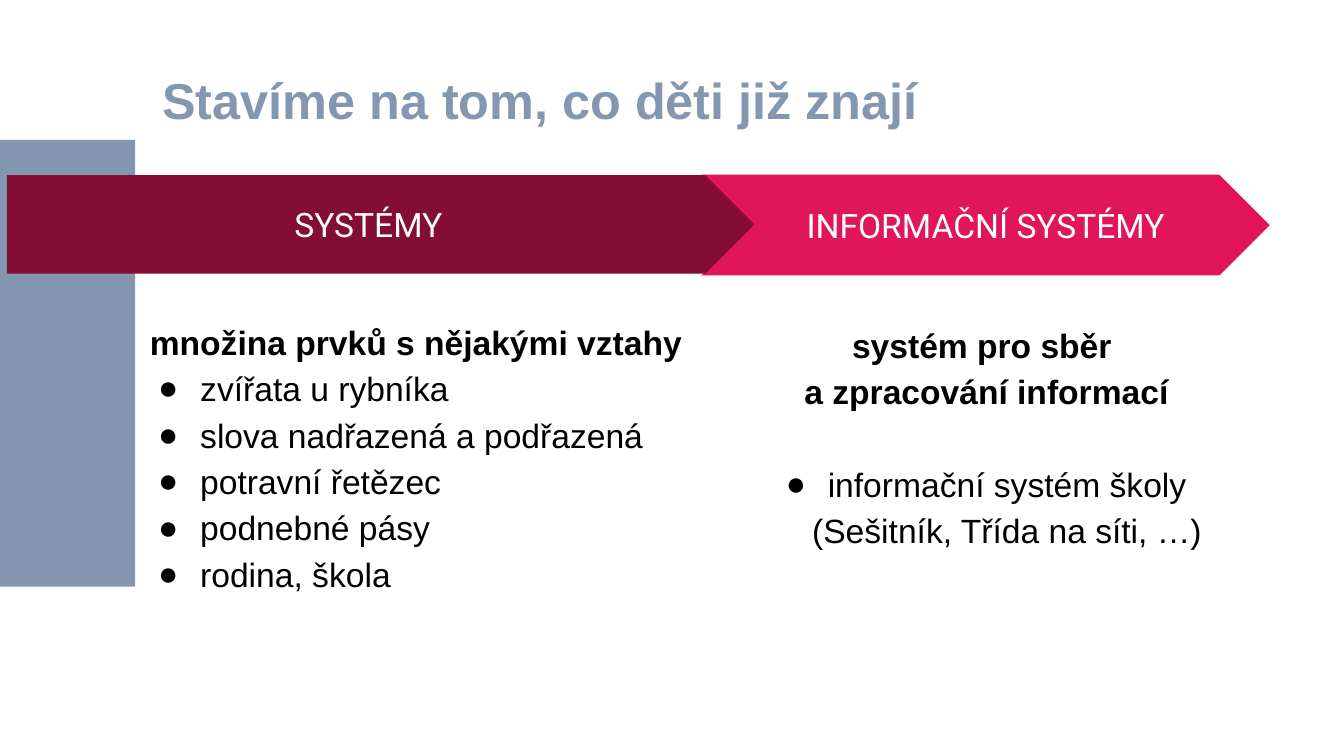
from copy import deepcopy

from lxml.etree import SubElement
from pptx import Presentation
from pptx.dml.color import RGBColor
from pptx.enum.shapes import MSO_SHAPE
from pptx.enum.text import MSO_ANCHOR, MSO_AUTO_SIZE, PP_ALIGN
from pptx.oxml.ns import qn
from pptx.util import Pt

STEEL = RGBColor(0x83, 0x97, 0xB0)
WINE = RGBColor(0x84, 0x0D, 0x35)
PINK = RGBColor(0xE1, 0x16, 0x5A)
WHITE = RGBColor(0xFF, 0xFF, 0xFF)
BLACK = RGBColor(0x00, 0x00, 0x00)

BULLET_MARGIN = Pt(36)
BULLET_INDENT = Pt(-30)
BLANK_LINE = 33
SYSTEM_EXAMPLES = [
    "zvířata u rybníka",
    "slova nadřazená a podřazená",
    "potravní řetězec",
    "podnebné pásy",
    "rodina, škola",
]


def set_bullet(paragraph, bullet):
    """Give the paragraph a black hanging bullet, or none."""
    properties = paragraph._p.get_or_add_pPr()
    properties.set("marL", str(BULLET_MARGIN if bullet else 0))
    properties.set("indent", str(BULLET_INDENT if bullet else 0))
    if bullet:
        color = SubElement(properties, qn("a:buClr"))
        SubElement(color, qn("a:srgbClr"), val=str(BLACK))
        SubElement(properties, qn("a:buChar"), char=bullet)
    else:
        SubElement(properties, qn("a:buNone"))


def write(paragraph, text, size=24, font="Arial", color=BLACK, bold=False,
          align=PP_ALIGN.LEFT, spacing=1.15, before=0, bullet=None):
    """Fill a paragraph with formatted text; a vertical tab breaks the line."""
    paragraph.text = text
    paragraph.alignment = align
    set_bullet(paragraph, bullet)
    paragraph.line_spacing = spacing
    paragraph.space_before = Pt(before)
    paragraph.space_after = Pt(0)
    for run in paragraph.runs:
        run.font.size = Pt(size)
        run.font.name = font
        run.font.bold = bold
        run.font.color.rgb = color
    for line_break in paragraph._p.findall(qn("a:br")):
        line_break.insert(0, deepcopy(paragraph.runs[0]._r.rPr))


def place(shape, left, top, width, height):
    """Move and size a placeholder, in points."""
    shape.left, shape.top = Pt(left), Pt(top)
    shape.width, shape.height = Pt(width), Pt(height)


def set_frame(frame, anchor, side, vertical):
    """Set anchor and margins of a wrapping text frame."""
    frame.word_wrap = True
    frame.auto_size = MSO_AUTO_SIZE.NONE
    frame.vertical_anchor = anchor
    frame.margin_left = frame.margin_right = Pt(side)
    frame.margin_top = frame.margin_bottom = Pt(vertical)


def add_block(slide, kind, left, top, width, height, fill):
    """Add a plain filled shape."""
    block = slide.shapes.add_shape(kind, Pt(left), Pt(top), Pt(width), Pt(height))
    block.shadow.inherit = False
    block.fill.solid()
    block.fill.fore_color.rgb = fill
    block.line.fill.background()
    return block


def add_arrow(slide, kind, left, top, width, height, fill, label):
    """Add a labelled arrow band."""
    arrow = add_block(slide, kind, left, top, width, height, fill)
    arrow.adjustments[0] = 0.5
    set_frame(arrow.text_frame, MSO_ANCHOR.MIDDLE, 9.6, 9.6)
    write(arrow.text_frame.paragraphs[0], label, font="Roboto", color=WHITE,
          align=PP_ALIGN.CENTER, spacing=1)


def fill_list(body, heading, items, align=PP_ALIGN.LEFT, gap=0):
    """Write a bold heading and bulleted items into a body placeholder."""
    frame = body.text_frame
    set_frame(frame, MSO_ANCHOR.TOP, 9.6, 9.6)
    write(frame.paragraphs[0], heading, bold=True, align=align)
    for item in items:
        write(frame.add_paragraph(), item, align=align, before=gap, bullet="●")


def main():
    """Build and save the slide."""
    deck = Presentation()
    deck.slide_width, deck.slide_height = Pt(960), Pt(540)
    slide = deck.slides.add_slide(deck.slide_layouts[3])
    headline, systems, information_systems = slide.placeholders

    add_block(slide, MSO_SHAPE.RECTANGLE, 0, 100, 96.5, 319, STEEL)

    place(headline, 108.7, 42.5, 762.5, 52.5)
    set_frame(headline.text_frame, MSO_ANCHOR.BOTTOM, 7.2, 3.6)
    write(headline.text_frame.paragraphs[0], "Stavíme na tom, co děti již znají",
          size=36, color=STEEL, bold=True, spacing=0.7)

    add_arrow(slide, MSO_SHAPE.CHEVRON, 501, 124.8, 406, 72, PINK,
              "INFORMAČNÍ SYSTÉMY")
    add_arrow(slide, MSO_SHAPE.PENTAGON, 5, 125, 534, 70.5, WINE, "SYSTÉMY")

    place(systems, 97.4, 216, 401.8, 274.3)
    fill_list(systems, "množina prvků s nějakými vztahy", SYSTEM_EXAMPLES)
    place(information_systems, 525.6, 218.2, 351.4, 280.8)
    fill_list(information_systems, "systém pro sběr\v a zpracování informací",
              ["informační systém školy\v(Sešitník, Třída na síti, …)"],
              align=PP_ALIGN.CENTER, gap=BLANK_LINE)

    deck.save("out.pptx")


if __name__ == "__main__":
    main()
